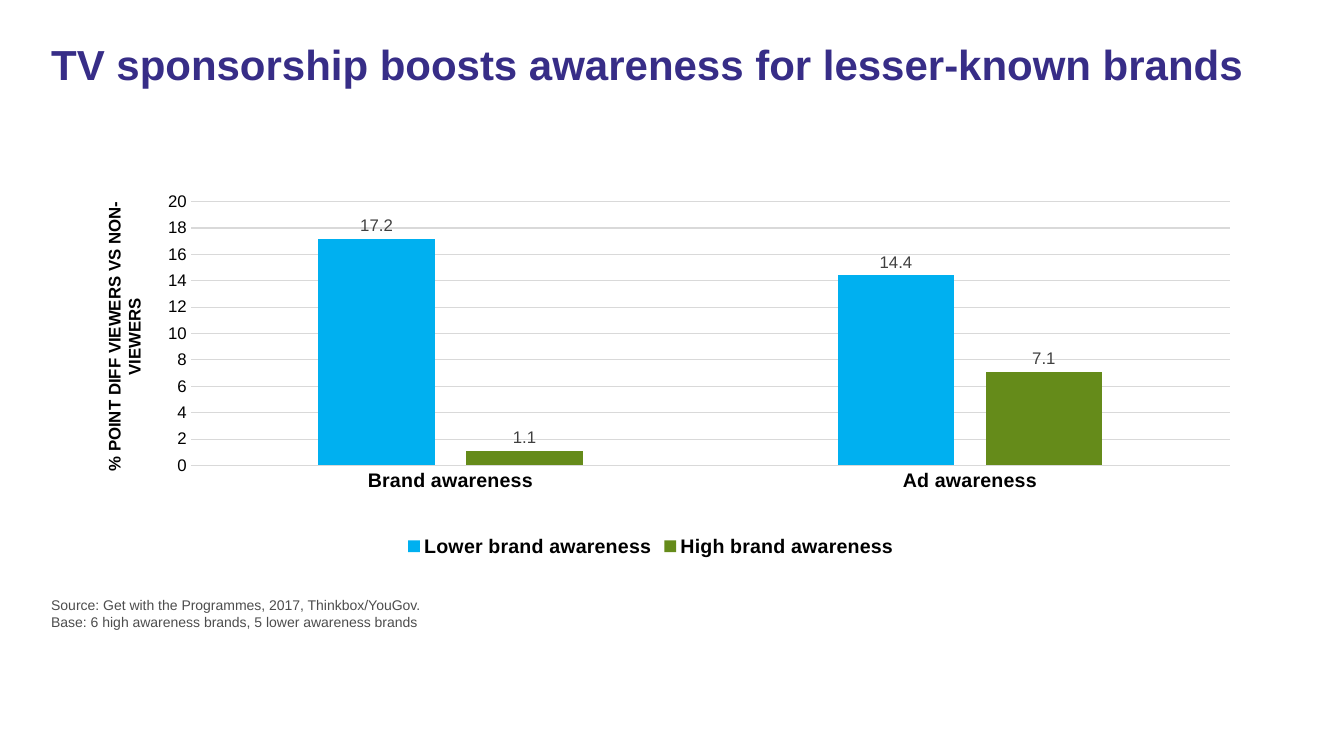
import pptx
import pptx.chart.data
import pptx.dml.color
import pptx.enum.chart
import pptx.enum.text
import pptx.oxml
import pptx.util
from pptx.util import Inches

TITLE = ["TV sponsorship boosts awareness for lesser-known brands"]
SOURCE = [
    "Source: Get with the Programmes, 2017, Thinkbox/YouGov.",
    "Base: 6 high awareness brands, 5 lower awareness brands",
]
SCALE_LABEL = ["% POINT DIFF VIEWERS VS NON-VIEWERS"]
MEASURES = ["Brand awareness", "Ad awareness"]
UPLIFTS = {
    "Lower brand awareness": ("lower", [17.2, 14.4]),
    "High brand awareness": ("high", [1.1, 7.1]),
}
PLOT_AREA = {"x": 0.113, "y": 0.043, "w": 0.874, "h": 0.702}

THEME = {
    "font": "Arial",
    "colours": {
        "title": "372D87", "source": "4D4D4D", "text": "000000", "value": "404040",
        "rule": "D9D9D9", "lower": "00B0F0", "high": "658B1A",
    },
    "sizes": {"title": 30, "category": 14, "scale": 12, "chart": 10, "source": 10},
    "rule_width": 0.75,
}


def colour(role):
    return pptx.dml.color.RGBColor.from_string(THEME["colours"][role])


def style_font(font, size, role, bold=False):
    font.color.rgb = colour(role)
    formats = {"name": THEME["font"], "size": pptx.util.Pt(THEME["sizes"][size]), "bold": bold}
    for attribute, value in formats.items():
        setattr(font, attribute, value)


def style_rule(line):
    line.color.rgb = colour("rule")
    line.width = pptx.util.Pt(THEME["rule_width"])


def add_text(slide, lines, place, size, role, bold=False, rotation=0, **paragraph_format):
    box = slide.shapes.add_textbox(*map(Inches, place))
    box.rotation = rotation
    frame = box.text_frame
    frame.word_wrap = True
    frame.text = "\n".join(lines)
    for paragraph in frame.paragraphs:
        for attribute, value in paragraph_format.items():
            setattr(paragraph, attribute, value)
        for run in paragraph.runs:
            style_font(run.font, size, role, bold)


def fix_plot_area(chart):
    """Pin the inner plot area to fixed fractions of the chart frame."""
    modes = "".join(f'<c:{edge}Mode val="edge"/>' for edge in "xy")
    extents = "".join(f'<c:{key} val="{value}"/>' for key, value in PLOT_AREA.items())
    layout = pptx.oxml.parse_xml(
        '<c:layout xmlns:c="http://schemas.openxmlformats.org/drawingml/2006/chart">'
        f'<c:manualLayout><c:layoutTarget val="inner"/>{modes}{extents}'
        "</c:manualLayout></c:layout>"
    )
    plot_area = chart._chartSpace.chart.plotArea
    for automatic in plot_area.xpath("c:layout"):
        plot_area.remove(automatic)
    plot_area.insert(0, layout)


def add_uplift_chart(slide, place):
    uplift_data = pptx.chart.data.CategoryChartData(number_format="#,##0.0")
    uplift_data.categories = MEASURES
    for name, (_, uplifts) in UPLIFTS.items():
        uplift_data.add_series(name, uplifts)
    chart = slide.shapes.add_chart(
        pptx.enum.chart.XL_CHART_TYPE.COLUMN_CLUSTERED, *map(Inches, place), uplift_data
    ).chart
    chart.has_title = False
    style_font(chart.font, "chart", "text")

    chart.has_legend = True
    chart.legend.position = pptx.enum.chart.XL_LEGEND_POSITION.BOTTOM
    chart.legend.include_in_layout = False
    style_font(chart.legend.font, "category", "text", bold=True)

    measures, scale = chart.category_axis, chart.value_axis
    for axis in (measures, scale):
        axis.major_tick_mark = axis.minor_tick_mark = pptx.enum.chart.XL_TICK_MARK.NONE
    style_font(measures.tick_labels.font, "category", "text", bold=True)
    style_rule(measures.format.line)
    style_font(scale.tick_labels.font, "scale", "text")
    scale.tick_labels.number_format = "0"
    scale.tick_labels.number_format_is_linked = False
    for attribute, value in {"minimum_scale": 0, "maximum_scale": 20, "major_unit": 2}.items():
        setattr(scale, attribute, value)
    scale.format.line.fill.background()
    style_rule(scale.major_gridlines.format.line)

    columns = chart.plots[0]
    for attribute, value in {"gap_width": 219, "overlap": -27, "vary_by_categories": False}.items():
        setattr(columns, attribute, value)
    for series, (role, _) in zip(columns.series, UPLIFTS.values()):
        series.format.fill.solid()
        series.format.fill.fore_color.rgb = colour(role)
        labels = series.data_labels
        label_format = {
            "show_value": True, "number_format": "#,##0.0", "number_format_is_linked": False,
            "position": pptx.enum.chart.XL_LABEL_POSITION.OUTSIDE_END,
        }
        for attribute, value in label_format.items():
            setattr(labels, attribute, value)
        style_font(labels.font, "scale", "value")
    fix_plot_area(chart)


def main():
    deck = pptx.Presentation()
    deck.slide_width, deck.slide_height = Inches(13.33), Inches(7.5)
    slide = deck.slides.add_slide(deck.slide_layouts[6])
    add_text(slide, TITLE, (0.41, 0.39, 12.4, 1.12), "title", "title", bold=True, line_spacing=0.9)
    add_text(slide, SOURCE, (0.41, 5.87, 12.4, 0.33), "source", "source")
    add_uplift_chart(slide, (0.56, 1.84, 11.79, 3.73))
    add_text(slide, SCALE_LABEL, (-0.31, 3.09, 3.08, 0.5), "scale", "text", bold=True,
             rotation=270, alignment=pptx.enum.text.PP_ALIGN.CENTER)
    deck.save("out.pptx")


if __name__ == "__main__":
    main()
